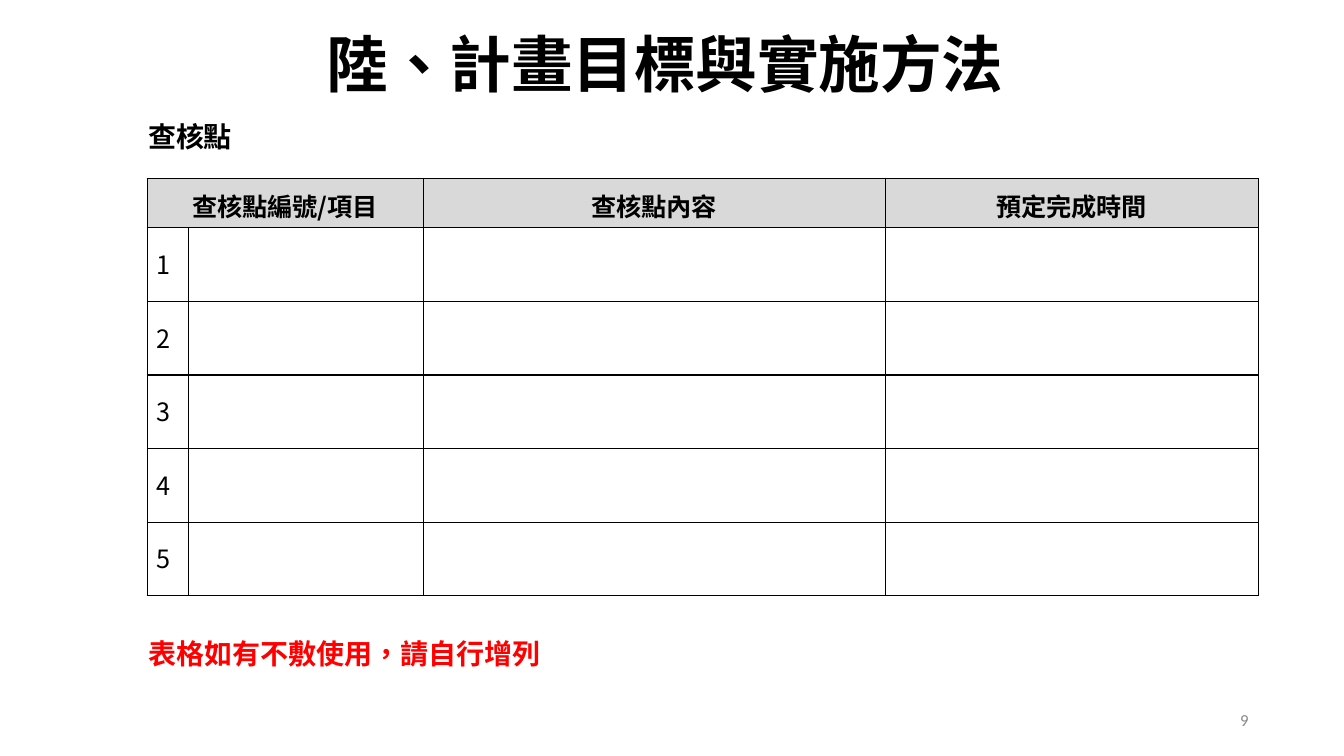
from lxml.etree import SubElement
from pptx import Presentation
from pptx.dml.color import RGBColor
from pptx.enum.lang import MSO_LANGUAGE_ID
from pptx.enum.text import MSO_ANCHOR, MSO_AUTO_SIZE, PP_ALIGN
from pptx.oxml.ns import qn
from pptx.util import Pt

PX = 9144  # 100 px to the inch
COLORS = {"ink": "000000", "note": "FF0000", "page": "888888", "head": "D9D9D9"}
CJK = "Noto Sans CJK SC"


def write(frame, text, size, color="ink", face=CJK, bold=True, gap=0, **form):
    """Put one formatted line into a text frame."""
    para = frame.paragraphs[0]
    para.space_before = Pt(0)
    for key, value in form.items():
        setattr(para, key, value)
    run = para.add_run()
    run.text = text
    style = {"size": Pt(size), "bold": bold, "name": face,
             "language_id": MSO_LANGUAGE_ID.TRADITIONAL_CHINESE}
    for key, value in style.items():
        setattr(run.font, key, value)
    run.font.color.rgb = RGBColor.from_string(COLORS[color])
    props = run._r.get_or_add_rPr()
    SubElement(props, qn("a:ea")).set("typeface", CJK)
    props.set("spc", str(gap))


def place(shape, left, top, width, height, inset=1):
    """Move a text shape and set up its frame."""
    box = {"left": left, "top": top, "width": width, "height": height}
    for key, value in box.items():
        setattr(shape, key, value * PX)
    frame = shape.text_frame
    form = {"margin_left": 0, "margin_right": 0, "margin_bottom": 0,
            "margin_top": inset * PX, "word_wrap": True,
            "auto_size": MSO_AUTO_SIZE.NONE, "vertical_anchor": MSO_ANCHOR.TOP}
    for key, value in form.items():
        setattr(frame, key, value)
    return frame


deck = Presentation()
deck.slide_width, deck.slide_height = 1333 * PX, 750 * PX
slide = deck.slides.add_slide(deck.slide_layouts[5])
shapes = slide.shapes

# Title
frame = place(shapes.title, 324, 25, 825, 75)
write(frame, "陸、計畫目標與實施方法", 44, gap=-10, alignment=PP_ALIGN.LEFT)

# Subtitle, note and page number
lines = [
    ((147, 118, 174, 35), "查核點", {"size": 20, "gap": -10}),
    ((147, 630, 865, 35), "表格如有不敷使用，請自行增列",
     {"size": 20, "color": "note", "face": "Calibri"}),
    ((1230, 707, 32, 17, 0), "9",
     {"size": 12, "color": "page", "face": "Calibri", "bold": False,
      "gap": -20, "line_spacing": Pt(12.4)}),
]
for spot, text, form in lines:
    frame = place(shapes.add_textbox(0, 0, PX, PX), *spot)
    write(frame, text, **form)

# Checkpoint table
cols = [41, 233, 458, 370]
rows = [49] + [73] * 5
table = shapes.add_table(len(rows), len(cols), 146 * PX, 177 * PX,
                         sum(cols) * PX, sum(rows) * PX).table
table.first_row = table.horz_banding = False
for col, width in zip(table.columns, cols):
    col.width = width * PX
for row, height in zip(table.rows, rows):
    row.height = height * PX

# Cell borders and fills
for index, row in enumerate(table.rows):
    for cell in row.cells:
        props = cell._tc.get_or_add_tcPr()
        for side in ("lnL", "lnR", "lnT", "lnB"):
            edge = SubElement(props, qn("a:" + side), w=str(Pt(1)))
            fill = SubElement(edge, qn("a:solidFill"))
            SubElement(fill, qn("a:srgbClr"), val=COLORS["ink"])
        if index == 0:
            cell.fill.solid()
            cell.fill.fore_color.rgb = RGBColor.from_string(COLORS["head"])
        else:
            cell.fill.background()

# Header row
table.cell(0, 0).merge(table.cell(0, 1))
heads = {0: "查核點編號/項目", 2: "查核點內容", 3: "預定完成時間"}
for col, text in heads.items():
    cell = table.cell(0, col)
    cell.margin_left = cell.margin_right = cell.margin_bottom = 0
    cell.margin_top = 9 * PX
    write(cell.text_frame, text, 18, gap=-10, alignment=PP_ALIGN.CENTER)

# Row numbers
for row in range(1, len(rows)):
    cell = table.cell(row, 0)
    cell.margin_right = cell.margin_top = cell.margin_bottom = 0
    cell.margin_left = 9 * PX
    cell.vertical_anchor = MSO_ANCHOR.MIDDLE
    write(cell.text_frame, str(row), 18, bold=False, line_spacing=0.9)

deck.save("out.pptx")
